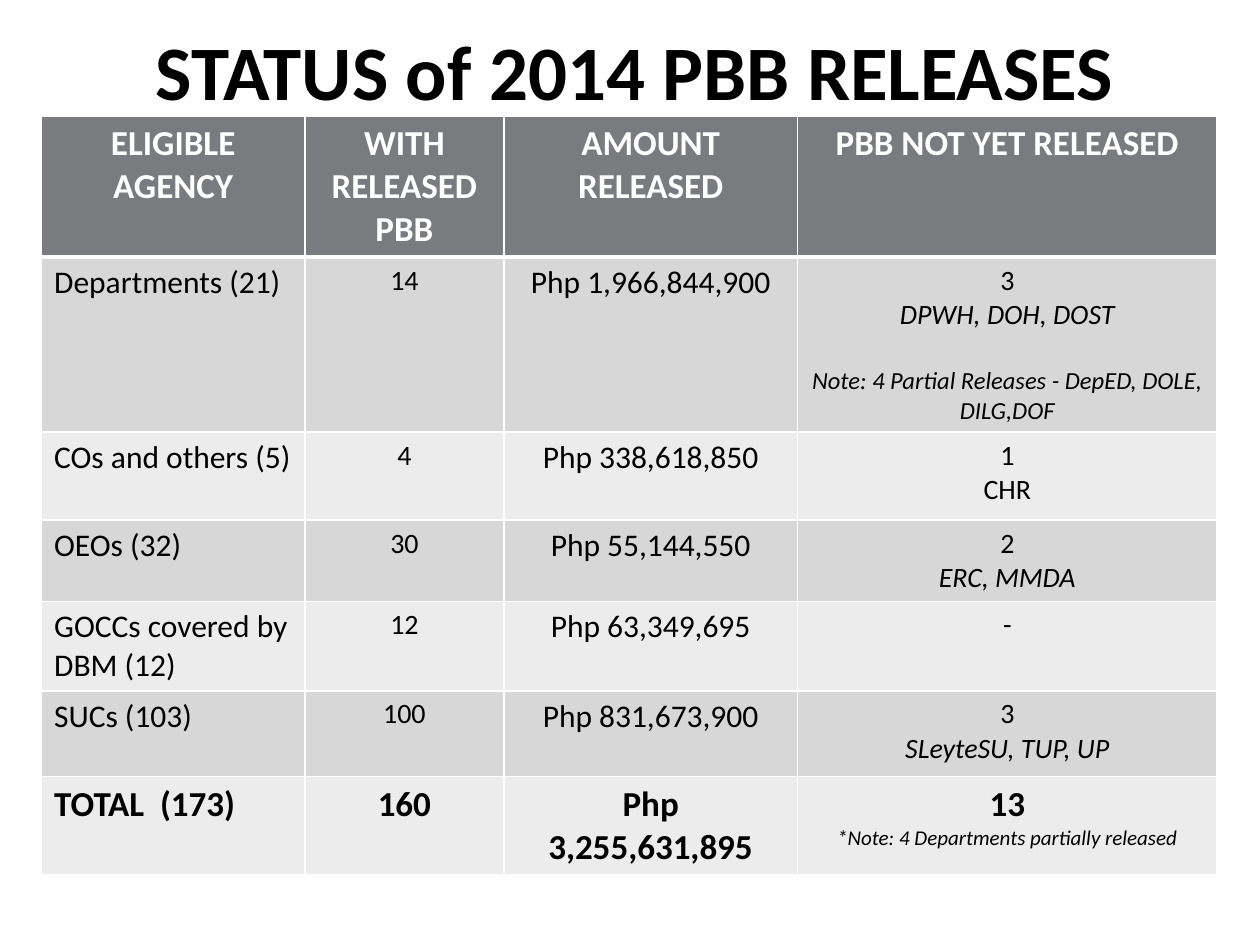
import pptx
import pptx.dml.color
import pptx.enum.text
import pptx.oxml.ns
import pptx.util
from lxml import etree

WIDTH, HEIGHT = 10, 7.5
FONT = "Calibri"
BLACK, WHITE = "000000", "FFFFFF"
HEADER_FILL = "797B7E"
BAND_FILLS = ("D7D7D8", "ECECEC")
LEFT, CENTER = pptx.enum.text.PP_ALIGN.LEFT, pptx.enum.text.PP_ALIGN.CENTER

COLUMN_WIDTHS = (2.09, 1.58, 2.33, 3.33)
ROW_HEIGHTS = (0.99, 0.81, 0.7, 0.62, 0.63, 0.68, 0.72)
HEADINGS = ("ELIGIBLE AGENCY", "WITH RELEASED PBB", "AMOUNT RELEASED",
            "PBB NOT YET RELEASED")

# Agency, number released, amount, then the lines on what is not yet released
# as (text, size, italic, space before)
AGENCIES = (
    ("Departments (21)", "14", "Php 1,966,844,900",
     (("3", 16, False, 0), ("DPWH, DOH, DOST", 16, True, 0),
      ("Note: 4 Partial Releases - DepED, DOLE, DILG,DOF", 14, True, 19.5))),
    ("COs and others (5)", "4", "Php 338,618,850",
     (("1", 16, False, 0), ("CHR", 16, False, 0))),
    ("OEOs (32)", "30", "Php 55,144,550",
     (("2", 16, False, 0), ("ERC, MMDA", 16, True, 0))),
    ("GOCCs covered by DBM (12)", "12", "Php 63,349,695",
     (("-", 16, False, 0),)),
    ("SUCs (103)", "100", "Php 831,673,900",
     (("3", 16, False, 0), ("SLeyteSU, TUP, UP", 16, True, 0))),
)
TOTALS = ("TOTAL  (173)", "160", "Php 3,255,631,895", "13")
TOTAL_NOTE = "*Note: 4 Departments partially released"


def color(value):
    return pptx.dml.color.RGBColor.from_string(value)


def write(frame, text, size, ink=BLACK, bold=False, italic=False,
          align=CENTER, before=0):
    """Fill the first paragraph if it is still empty, else add one."""
    para = frame.paragraphs[0]
    if para.runs:
        para = frame.add_paragraph()
    para.alignment = align
    if before:
        para.space_before = pptx.util.Pt(before)
    span = para.add_run()
    span.text = text
    span.font.name = FONT
    span.font.size = pptx.util.Pt(size)
    span.font.bold = bold
    span.font.italic = italic
    span.font.color.rgb = color(ink)


def style_cell(cell, fill, bottom=1, top=1):
    cell.fill.solid()
    cell.fill.fore_color.rgb = color(fill)
    properties = cell._tc.get_or_add_tcPr()
    sides = (("L", 1), ("R", 1), ("T", top), ("B", bottom))
    for place, (side, width) in enumerate(sides):
        line = etree.Element(pptx.oxml.ns.qn(f"a:ln{side}"),
                             w=str(pptx.util.Pt(width)))
        solid = etree.SubElement(line, pptx.oxml.ns.qn("a:solidFill"))
        etree.SubElement(solid, pptx.oxml.ns.qn("a:srgbClr"), val=WHITE)
        properties.insert(place, line)


def add_status_table(page):
    table = page.shapes.add_table(
        len(ROW_HEIGHTS), len(COLUMN_WIDTHS),
        pptx.util.Inches(0.33), pptx.util.Inches(0.92),
        pptx.util.Inches(sum(COLUMN_WIDTHS)),
        pptx.util.Inches(sum(ROW_HEIGHTS))).table
    for column, width in zip(table.columns, COLUMN_WIDTHS):
        column.width = pptx.util.Inches(width)
    for row, height in zip(table.rows, ROW_HEIGHTS):
        row.height = pptx.util.Inches(height)

    # Header row, with a heavier rule below it
    for column, heading in enumerate(HEADINGS):
        cell = table.cell(0, column)
        style_cell(cell, HEADER_FILL, bottom=3)
        write(cell.text_frame, heading, 20, WHITE, bold=True)

    # Banded body
    for row in range(1, len(ROW_HEIGHTS)):
        for cell in table.rows[row].cells:
            style_cell(cell, BAND_FILLS[(row - 1) % 2],
                       top=3 if row == 1 else 1)

    # Agency rows
    for row, (agency, count, amount, pending) in enumerate(AGENCIES, 1):
        frames = [cell.text_frame for cell in table.rows[row].cells]
        write(frames[0], agency, 18, align=LEFT)
        write(frames[1], count, 16)
        write(frames[2], amount, 18)
        for text, size, italic, before in pending:
            write(frames[3], text, size, italic=italic, before=before)

    # Total row
    last = len(ROW_HEIGHTS) - 1
    for column, text in enumerate(TOTALS):
        write(table.cell(last, column).text_frame, text, 20, bold=True,
              align=CENTER if column else LEFT)
    write(table.cell(last, 3).text_frame, TOTAL_NOTE, 12, italic=True)


def add_title(page, text):
    box = page.shapes.add_textbox(*map(pptx.util.Inches,
                                       (0.58, 0.08, 8.92, 0.95)))
    frame = box.text_frame
    frame.word_wrap = True
    frame.vertical_anchor = pptx.enum.text.MSO_ANCHOR.MIDDLE
    write(frame, text, 44, bold=True)


def main():
    deck = pptx.Presentation()
    deck.slide_width = pptx.util.Inches(WIDTH)
    deck.slide_height = pptx.util.Inches(HEIGHT)
    page = deck.slides.add_slide(deck.slide_layouts[6])
    add_status_table(page)
    add_title(page, "STATUS of 2014 PBB RELEASES")
    deck.save("out.pptx")


if __name__ == "__main__":
    main()
